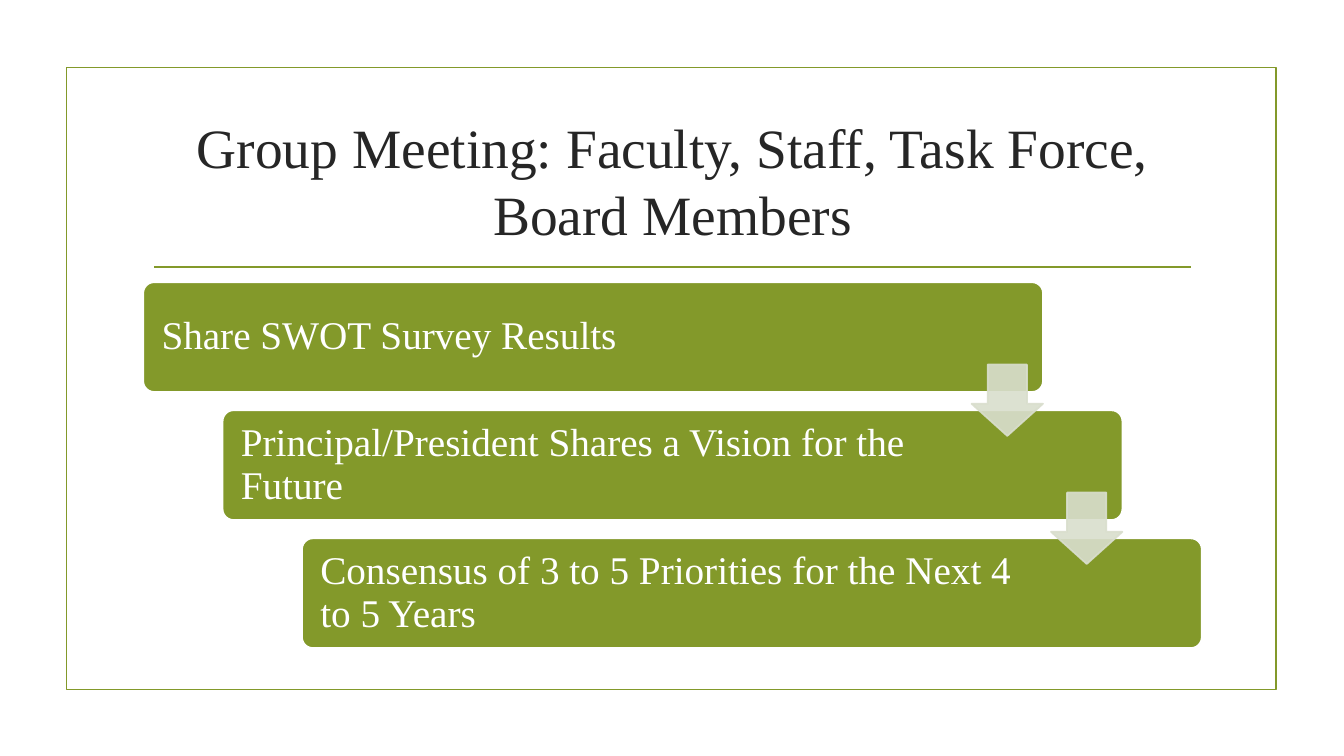
from lxml.etree import SubElement
from pptx import Presentation
from pptx.dml.color import RGBColor
from pptx.enum.shapes import MSO_CONNECTOR as LINE, MSO_SHAPE as SHAPE
from pptx.enum.text import MSO_ANCHOR as ANCHOR, MSO_AUTO_SIZE as FIT, PP_ALIGN as ALIGN
from pptx.oxml.ns import qn
from pptx.util import Inches, Pt

GREEN = RGBColor(0x83, 0x99, 0x2A)
WHITE = RGBColor(0xFF, 0xFF, 0xFF)
INK = RGBColor(0x26, 0x26, 0x26)
PALE = RGBColor(0xD9, 0xDE, 0xCD)
FONT = "Times New Roman"
WIDE, HIGH = 13.33, 7.5
STEPS = [
    "Share SWOT Survey Results",
    "Principal/President Shares a Vision for the Future",
    "Consensus of 3 to 5 Priorities for the Next 4 to 5 Years",
]


def write(shape, text, size, color, align=ALIGN.LEFT, pads=(0.1, 0.05, 0.1, 0.05), lead=1.0):
    frame = shape.text_frame
    frame.word_wrap = True
    frame.auto_size = FIT.NONE
    frame.vertical_anchor = ANCHOR.MIDDLE
    (frame.margin_left, frame.margin_top,
     frame.margin_right, frame.margin_bottom) = map(Inches, pads)
    para = frame.paragraphs[0]
    para.text = text
    para.alignment = align
    para.line_spacing = lead
    font = para.runs[0].font
    font.name, font.size, font.color.rgb = FONT, Pt(size), color


def draw(slide, kind, box, fill, edge, adjust=()):
    shape = slide.shapes.add_shape(kind, *map(Inches, box))
    shape.shadow.inherit = False
    if fill is None:
        shape.fill.background()
    else:
        shape.fill.solid()
        shape.fill.fore_color.rgb = fill
    shape.line.color.rgb = edge
    shape.line.width = Pt(1.25)
    for i, value in enumerate(adjust):
        shape.adjustments[i] = value
    return shape


def fade(shape, share):
    """Set the opacity of a shape's fill and line."""
    for color in shape._element.spPr.iter(qn("a:srgbClr")):
        SubElement(color, qn("a:alpha"), val=str(int(share * 100000)))


def add_frame(slide, box):
    draw(slide, SHAPE.RECTANGLE, box, None, GREEN)


def add_title(slide, box, text):
    left, top, width, height = box
    title = slide.shapes.title
    title.left, title.top, title.width, title.height = map(Inches, box)
    write(title, text, 39.6, INK, ALIGN.CENTER)
    y = top + height + 0.15
    ends = left + 0.11, y, left + width - 0.11, y
    rule = slide.shapes.add_connector(LINE.STRAIGHT, *map(Inches, ends))
    rule.line.color.rgb = GREEN
    rule.line.width = Pt(1.25)
    SubElement(rule._element.spPr, qn("a:effectLst"))


def add_stairs(slide, box, steps):
    """Place bars stepping down to the right, with an arrow between neighbours."""
    left, top, width, height = box
    wide, high = width * 0.85, height * 0.3
    gaps = len(steps) - 1
    across, down = (width - wide) / gaps, (height - high) / gaps
    side = high * 0.65
    for i, text in enumerate(steps):
        bar = draw(slide, SHAPE.ROUNDED_RECTANGLE,
                   (left + i * across, top + i * down, wide, high), GREEN, WHITE, [0.1])
        write(bar, text, 28, WHITE, pads=(0.15, 0.15, 1.64, 0.15), lead=0.9)
    for i in range(gaps):
        x = left + i * across + wide - side
        y = top + i * down + high * 0.75
        # Block arrows list the head length after the shaft width.
        arrow = draw(slide, SHAPE.DOWN_ARROW, (x, y, side, side), PALE, PALE, [0.55, 0.45])
        fade(arrow, 0.9)


def main():
    deck = Presentation()
    deck.slide_width, deck.slide_height = Inches(WIDE), Inches(HIGH)
    slide = deck.slides.add_slide(deck.slide_layouts[5])
    add_frame(slide, (0.66, 0.67, WIDE * 0.9, 6.17))
    add_title(slide, (1.42, 1.07, 10.5, 1.43),
              "Group Meeting: Faculty, Staff, Task Force, Board Members")
    add_stairs(slide, (1.42, 2.8, 10.5, 3.63), STEPS)
    deck.save("out.pptx")


if __name__ == "__main__":
    main()
